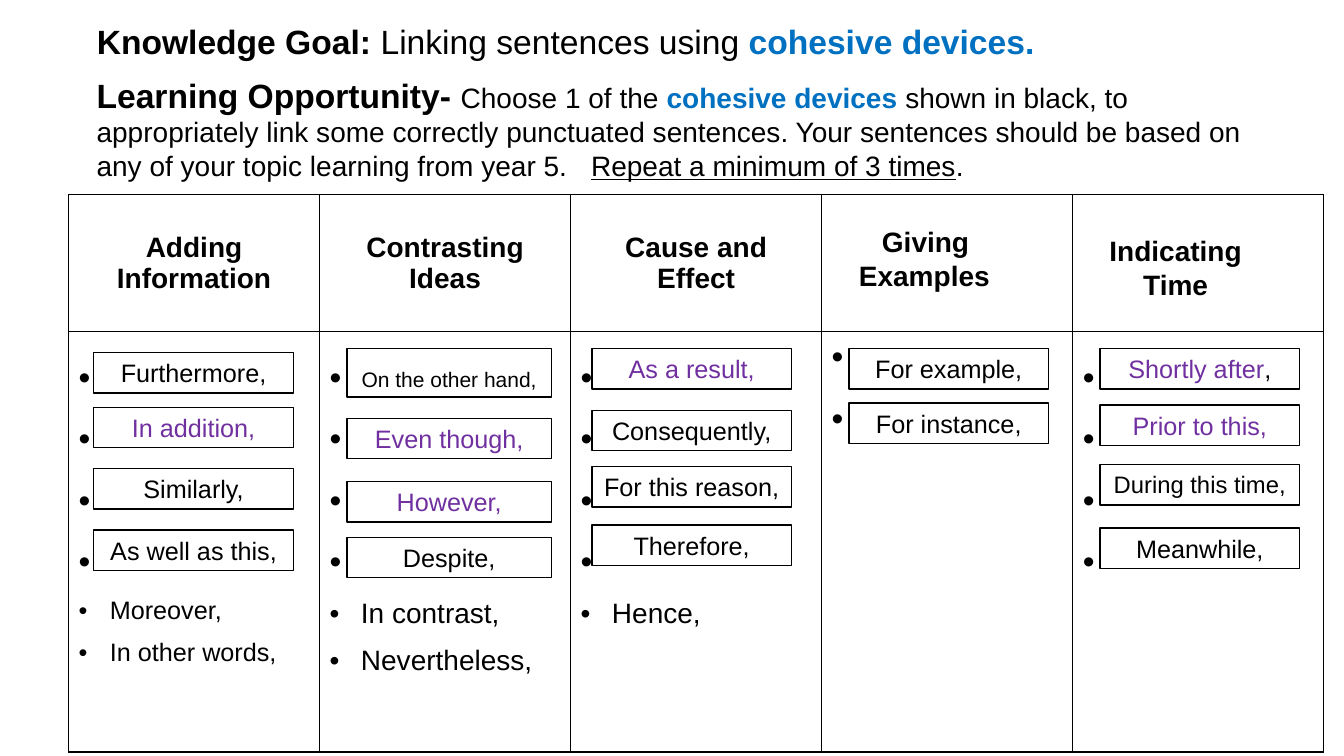
"""Build a slide of cohesive devices sorted into five columns."""
from lxml import etree
from pptx import Presentation
from pptx import util as u
from pptx.dml.color import RGBColor
from pptx.enum import shapes, text
from pptx.oxml import ns

BLACK = RGBColor(0x00, 0x00, 0x00)
WHITE = RGBColor(0xFF, 0xFF, 0xFF)
BLUE = RGBColor(0x00, 0x70, 0xC0)
PURPLE = RGBColor(0x70, 0x30, 0xA0)

TABLE_LEFT, TABLE_TOP = 0.68, 1.93
COLUMN, HEADER_ROW, BODY_ROW = 2.49, 1.36, 4.17
BODY_TOP = TABLE_TOP + HEADER_ROW
CARD_HEIGHT = 0.4
INDENT = 0.31
CENTER = text.PP_ALIGN.CENTER
LEFT = text.PP_ALIGN.LEFT

HEADINGS = [("Adding Information",), ("Contrasting Ideas",), ("Cause and", "Effect")]

# Each column: blank bullets, first line spacing, listed words, word size
BULLETS = [
    (4, 1.5, ["Moreover,", "In other words,"], 18),
    (4, 1.5, ["In contrast,", "Nevertheless,"], 20),
    (4, 1.5, ["Hence,"], 20),
    (2, 1.0, [], 18),
    (4, 1.5, [], 18),
]

# Each column: inset, card width, cards as (drop, words, colour)
CARDS = [
    (0.25, 1.98, [(0.21, "Furthermore,", BLACK), (0.75, "In addition,", PURPLE),
                  (1.36, "Similarly,", BLACK), (1.97, "As well as this,", BLACK)]),
    (0.27, 2.03, [(0.17, "On the other hand,", BLACK), (0.86, "Even though,", PURPLE),
                  (1.49, "However,", PURPLE), (2.04, "Despite,", BLACK)]),
    (0.21, 1.98, [(0.17, "As a result,", PURPLE), (0.78, "Consequently,", BLACK),
                  (1.34, "For this reason,", BLACK), (1.92, "Therefore,", BLACK)]),
    (0.27, 1.98, [(0.17, "For example,", BLACK), (0.71, "For instance,", BLACK)]),
    (0.27, 1.98, [(0.17, "Shortly after", PURPLE), (0.73, "Prior to this,", PURPLE),
                  (1.32, "During this time,", BLACK), (1.95, "Meanwhile,", BLACK)]),
]
CARD_SIZES = {"On the other hand,": 15, "During this time,": 17}
CARD_ENDINGS = {"Shortly after": ","}


def add_run(paragraph, words, size, color=BLACK, bold=False, underline=False, font="Arial"):
    """Append one formatted run to a paragraph."""
    run = paragraph.add_run()
    run.text = words
    run.font.name = font
    run.font.size = u.Pt(size)
    run.font.bold = bold
    run.font.underline = underline
    run.font.color.rgb = color


def next_paragraph(frame, first):
    """Return the opening paragraph of a frame, or a new one."""
    return frame.paragraphs[0] if first else frame.add_paragraph()


def add_text_box(slide, left, top, width, height, wrap=True):
    """Add a text box and return its frame."""
    box = slide.shapes.add_textbox(u.Inches(left), u.Inches(top), u.Inches(width), u.Inches(height))
    box.text_frame.word_wrap = wrap
    box.text_frame.auto_size = text.MSO_AUTO_SIZE.SHAPE_TO_FIT_TEXT
    return box.text_frame


def add_bullet(paragraph, spacing):
    """Give a paragraph a round bullet with a hanging indent."""
    paragraph.line_spacing = spacing
    properties = paragraph._p.get_or_add_pPr()
    properties.set("marL", str(u.Inches(INDENT)))
    properties.set("indent", str(-u.Inches(INDENT)))
    font = etree.SubElement(properties, ns.qn("a:buFont"))
    font.set("typeface", "Arial")
    etree.SubElement(properties, ns.qn("a:buChar")).set("char", "•")


def style_cell(cell):
    """Fill a cell white and draw a black line on its four sides."""
    cell.fill.solid()
    cell.fill.fore_color.rgb = WHITE
    properties = cell._tc.get_or_add_tcPr()
    for index, side in enumerate(("a:lnL", "a:lnR", "a:lnT", "a:lnB")):
        line = etree.Element(ns.qn(side), w=str(u.Pt(1)))
        fill = etree.SubElement(line, ns.qn("a:solidFill"))
        etree.SubElement(fill, ns.qn("a:srgbClr")).set("val", str(BLACK))
        properties.insert(index, line)


def fill_heading(cell, lines):
    """Write a centred bold heading in a cell."""
    cell.vertical_anchor = text.MSO_ANCHOR.MIDDLE
    paragraph = cell.text_frame.paragraphs[0]
    paragraph.alignment = CENTER
    for index, words in enumerate(lines):
        if index:
            paragraph.add_line_break()
        add_run(paragraph, words, 20, bold=True)


def fill_bullets(cell, blanks, first_spacing, listed, size):
    """Write the bullets beside the cards, then the listed words."""
    entries = [(" ", 24, "Calibri")] * blanks + [(words, size, "Arial") for words in listed]
    for index, (words, points, font) in enumerate(entries):
        paragraph = next_paragraph(cell.text_frame, index == 0)
        add_bullet(paragraph, 1.5 if index else first_spacing)
        add_run(paragraph, words, points, font=font)


def add_device_table(slide):
    """Add the table of headings and bullets."""
    frame = slide.shapes.add_table(
        2, len(BULLETS), u.Inches(TABLE_LEFT), u.Inches(TABLE_TOP),
        u.Inches(COLUMN * len(BULLETS)), u.Inches(HEADER_ROW + BODY_ROW))
    table = frame.table
    table.first_row = table.horz_banding = False
    for row, height in zip(table.rows, (HEADER_ROW, BODY_ROW)):
        row.height = u.Inches(height)
    for column in table.columns:
        column.width = u.Inches(COLUMN)
    for cell in table.iter_cells():
        style_cell(cell)
    for index, lines in enumerate(HEADINGS):
        fill_heading(table.cell(0, index), lines)
    for index, bullets in enumerate(BULLETS):
        fill_bullets(table.cell(1, index), *bullets)


def add_card(slide, left, top, width, words, color):
    """Add one outlined card with a cohesive device."""
    size = CARD_SIZES.get(words, 18)
    height = 0.48 if size == 15 else CARD_HEIGHT
    card = slide.shapes.add_shape(
        shapes.MSO_SHAPE.RECTANGLE, u.Inches(left), u.Inches(top), u.Inches(width), u.Inches(height))
    card.shadow.inherit = False
    card.fill.solid()
    card.fill.fore_color.rgb = WHITE
    card.line.color.rgb = BLACK
    card.line.width = u.Pt(1)
    frame = card.text_frame
    frame.word_wrap = True
    frame.auto_size = text.MSO_AUTO_SIZE.SHAPE_TO_FIT_TEXT
    frame.vertical_anchor = text.MSO_ANCHOR.TOP
    paragraph = frame.paragraphs[0]
    paragraph.alignment = CENTER
    if size == 15:
        paragraph.line_spacing = 1.5
    add_run(paragraph, words, size, color)
    if words in CARD_ENDINGS:
        add_run(paragraph, CARD_ENDINGS[words], size)


def add_floating_heading(slide, left, top, lines):
    """Add a two-line heading over an empty header cell."""
    frame = add_text_box(slide, left, top, 1.52, 0.77, wrap=False)
    for index, (words, alignment) in enumerate(lines):
        paragraph = next_paragraph(frame, index == 0)
        paragraph.alignment = alignment
        add_run(paragraph, words, 20, bold=True)


def add_goal(slide):
    """Place the knowledge goal in the title placeholder."""
    title = slide.shapes.title
    title.left, title.top = u.Inches(0.86), u.Inches(0.16)
    title.width, title.height = u.Inches(12.27), u.Inches(0.5)
    title.text_frame.vertical_anchor = text.MSO_ANCHOR.TOP
    title.text_frame.auto_size = text.MSO_AUTO_SIZE.NONE
    paragraph = title.text_frame.paragraphs[0]
    paragraph.alignment = LEFT
    add_run(paragraph, "Knowledge Goal: ", 24, bold=True)
    add_run(paragraph, "Linking sentences using ", 24)
    add_run(paragraph, "cohesive devices.", 24, BLUE, bold=True)


def add_task(slide):
    """Add the learning opportunity."""
    paragraph = add_text_box(slide, 0.86, 0.69, 12.03, 1.18).paragraphs[0]
    add_run(paragraph, "Learning Opportunity- ", 24, bold=True)
    add_run(paragraph, "Choose 1 of the ", 20)
    add_run(paragraph, "cohesive devices ", 20, BLUE, bold=True)
    add_run(paragraph, "shown in black, to appropriately link some correctly punctuated sentences. "
            "Your sentences should be based on any of your topic learning from year 5.   ", 20)
    add_run(paragraph, "Repeat a minimum of 3 times", 20, underline=True)
    add_run(paragraph, ".", 20)


def main():
    """Build and save the slide."""
    presentation = Presentation()
    presentation.slide_width, presentation.slide_height = u.Inches(13.33), u.Inches(7.5)
    slide = presentation.slides.add_slide(presentation.slide_layouts[5])
    add_goal(slide)
    add_task(slide)
    add_device_table(slide)
    for index, (inset, width, cards) in enumerate(CARDS):
        for drop, words, color in cards:
            add_card(slide, TABLE_LEFT + index * COLUMN + inset, BODY_TOP + drop, width, words, color)
    add_floating_heading(slide, 8.42, 2.18, [("Giving", CENTER), ("Examples", LEFT)])
    add_floating_heading(slide, 10.9, 2.27, [("Indicating", CENTER), ("Time", CENTER)])
    presentation.save("out.pptx")


if __name__ == "__main__":
    main()
